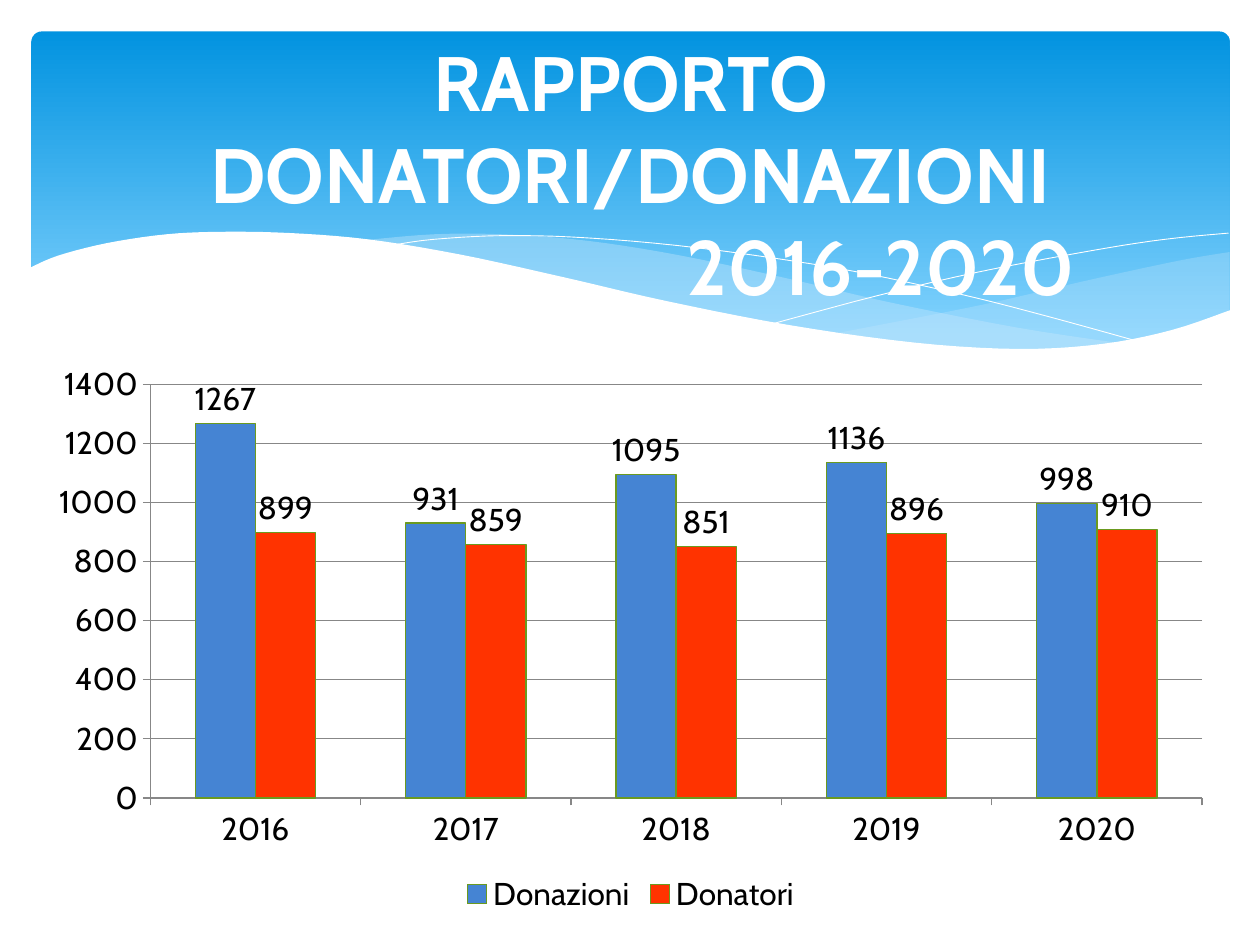
from lxml import etree
from pptx import Presentation
from pptx.chart.data import CategoryChartData
from pptx.dml.color import RGBColor
from pptx.enum.chart import XL_CHART_TYPE, XL_LABEL_POSITION, XL_LEGEND_POSITION, XL_TICK_MARK
from pptx.enum.shapes import MSO_SHAPE
from pptx.enum.text import MSO_ANCHOR, PP_ALIGN
from pptx.oxml.ns import qn
from pptx.util import Inches, Pt

COLUMNS = XL_CHART_TYPE.COLUMN_CLUSTERED
OUTSIDE_END = XL_LABEL_POSITION.OUTSIDE_END
LEGEND_BOTTOM = XL_LEGEND_POSITION.BOTTOM
TICK_OUT, TICK_NONE = XL_TICK_MARK.OUTSIDE, XL_TICK_MARK.NONE
ROUNDED = MSO_SHAPE.ROUNDED_RECTANGLE
MIDDLE, CENTER = MSO_ANCHOR.MIDDLE, PP_ALIGN.CENTER

WHITE = RGBColor(0xFF, 0xFF, 0xFF)
BLACK = RGBColor(0, 0, 0)
DEEP_BLUE = RGBColor(0x02, 0x93, 0xE0)
SKY_BLUE = RGBColor(0x83, 0xD3, 0xFE)
PALE_BLUE = RGBColor(0xC6, 0xE7, 0xFC)
GRID_GRAY = RGBColor(0x87, 0x87, 0x87)
BAR_EDGE = RGBColor(0x6B, 0x9A, 0x1F)
FONT = "Cabin"

TITLE = [("RAPPORTO DONATORI/DONAZIONI", 0), ("2016-2020", 3.97)]  # text, left indent
YEARS = ["2016", "2017", "2018", "2019", "2020"]
SERIES = [
    ("Donazioni", (1267, 931, 1095, 1136, 998), RGBColor(0x45, 0x84, 0xD3)),
    ("Donatori", (899, 859, 851, 896, 910), RGBColor(0xFF, 0x33, 0x00)),
]

# Each wave: curves in inches, fill, opacity in percent. Curves meet at corners.
WAVES = [
    ([[(9.76, 2), (9.35, 2.07), (8.61, 2.23), (7.79, 2.42), (6.61, 2.65)],
      [(6.61, 2.65), (7.19, 2.72), (7.69, 2.77), (8.14, 2.78), (8.54, 2.76),
       (8.97, 2.7), (9.35, 2.62), (9.76, 2.47)]], PALE_BLUE, 29),
    ([[(8.93, 2.73), (8.07, 2.6), (7.06, 2.4), (6.29, 2.22), (5.41, 2.03),
       (4.65, 1.91), (3.99, 1.86), (3.44, 1.86), (2.86, 1.91)],
      [(2.86, 1.91), (3.62, 2.03), (4.49, 2.22), (5.66, 2.48), (6.5, 2.64),
       (7.22, 2.74), (7.85, 2.78), (8.38, 2.78), (8.93, 2.73)]], PALE_BLUE, 40),
    ([[(3.09, 1.95), (3.44, 1.9), (4.01, 1.87), (4.69, 1.89), (5.56, 1.97),
       (6.65, 2.13), (7.6, 2.33), (8.31, 2.51), (9.07, 2.72)]], None, 100),
    ([[(6.13, 2.57), (6.95, 2.35), (7.76, 2.16), (8.66, 1.99), (9.24, 1.9),
       (9.75, 1.85)]], None, 100),
    ([[(9.77, 2.46), (9.3, 2.62), (8.75, 2.73), (8.09, 2.77), (7.26, 2.72),
       (6.26, 2.58), (5.29, 2.39), (4.47, 2.2), (3.65, 2.02), (2.92, 1.9),
       (2.3, 1.85), (1.77, 1.84), (1.32, 1.86), (0.85, 1.93), (0.46, 2.03),
       (0.23, 2.13)],
      [(0.23, 3.29), (9.77, 3.29)]], WHITE, 100),
]


def smooth(points, steps=5):
    """Return a Catmull-Rom curve through the points."""
    padded = [points[0], *points, points[-1]]
    curve = [points[0]]
    for a, b, c, d in zip(padded, padded[1:], padded[2:], padded[3:]):
        for step in range(1, steps + 1):
            t = step / steps
            curve.append(tuple(
                q + t / 2 * (r - p + t * (2 * p - 5 * q + 4 * r - s + t * (3 * (q - r) + s - p)))
                for p, q, r, s in zip(a, b, c, d)))
    return curve


def add_wave(slide, curves, color, opacity):
    points = [(Inches(x), Inches(y)) for curve in curves for x, y in smooth(curve)]
    builder = slide.shapes.build_freeform(*points[0])
    builder.add_line_segments(points[1:], close=color is not None)
    wave = builder.convert_to_shape()
    wave.shadow.inherit = False
    if color is None:
        wave.fill.background()
        wave.line.color.rgb = WHITE
        wave.line.width = Pt(0.5)
        return
    wave.fill.solid()
    wave.fill.fore_color.rgb = color
    wave.line.fill.background()
    if opacity < 100:
        rgb = wave.fill._xPr.find(".//" + qn("a:srgbClr"))
        etree.SubElement(rgb, qn("a:alpha")).set("val", str(opacity * 1000))


def add_banner(slide):
    banner = slide.shapes.add_shape(ROUNDED, Inches(0.25), Inches(0.25), Inches(9.51), Inches(2.7))
    banner.adjustments[0] = 0.03
    banner.shadow.inherit = False
    banner.line.fill.background()
    banner.fill.gradient()
    banner.fill.gradient_angle = 270
    for stop, color, position in zip(banner.fill.gradient_stops, (DEEP_BLUE, SKY_BLUE), (0, 0.9)):
        stop.color.rgb = color
        stop.position = position
    for wave in WAVES:
        add_wave(slide, *wave)


def add_donation_chart(slide):
    data = CategoryChartData()
    data.categories = YEARS
    for name, values, _ in SERIES:
        data.add_series(name, values)
    chart = slide.shapes.add_chart(
        COLUMNS, Inches(0.28), Inches(2.81), Inches(9.45), Inches(4.49), data).chart
    chart.has_title = False
    chart.font.name, chart.font.size = FONT, Pt(18)
    chart.font.color.rgb = BLACK
    chart.has_legend = True
    chart.legend.position = LEGEND_BOTTOM
    chart.legend.include_in_layout = False

    chart.value_axis.has_major_gridlines = True
    lines = [chart.value_axis.major_gridlines.format.line]
    for axis in (chart.category_axis, chart.value_axis):
        axis.major_tick_mark, axis.minor_tick_mark = TICK_OUT, TICK_NONE
        lines.append(axis.format.line)
    for line in lines:
        line.color.rgb = GRID_GRAY
        line.width = Pt(0.75)

    plot = chart.plots[0]
    plot.gap_width, plot.overlap, plot.vary_by_categories = 150, 0, False
    for series, (_, _, color) in zip(plot.series, SERIES):
        series.format.fill.solid()
        series.format.fill.fore_color.rgb = color
        series.format.line.color.rgb = BAR_EDGE
        series.format.line.width = Pt(0.75)
        labels = series.data_labels
        labels.show_value = True
        labels.position = OUTSIDE_END


def add_title(slide):
    box = slide.shapes.add_textbox(Inches(0.24), Inches(0.39), Inches(9.53), Inches(1.96))
    frame = box.text_frame
    frame.word_wrap = True
    frame.vertical_anchor = MIDDLE
    for index, (text, indent) in enumerate(TITLE):
        para = frame.add_paragraph() if index else frame.paragraphs[0]
        para.alignment = CENTER
        if indent:
            para._p.get_or_add_pPr().set("marL", str(Inches(indent)))
        span = para.add_run()
        span.text = text
        span.font.name, span.font.size, span.font.bold = FONT, Pt(44), True
        span.font.color.rgb = WHITE


def main():
    deck = Presentation()
    deck.slide_width, deck.slide_height = Inches(10), Inches(7.5)
    slide = deck.slides.add_slide(deck.slide_layouts[6])
    add_banner(slide)
    add_donation_chart(slide)
    add_title(slide)
    deck.save("out.pptx")


if __name__ == "__main__":
    main()
